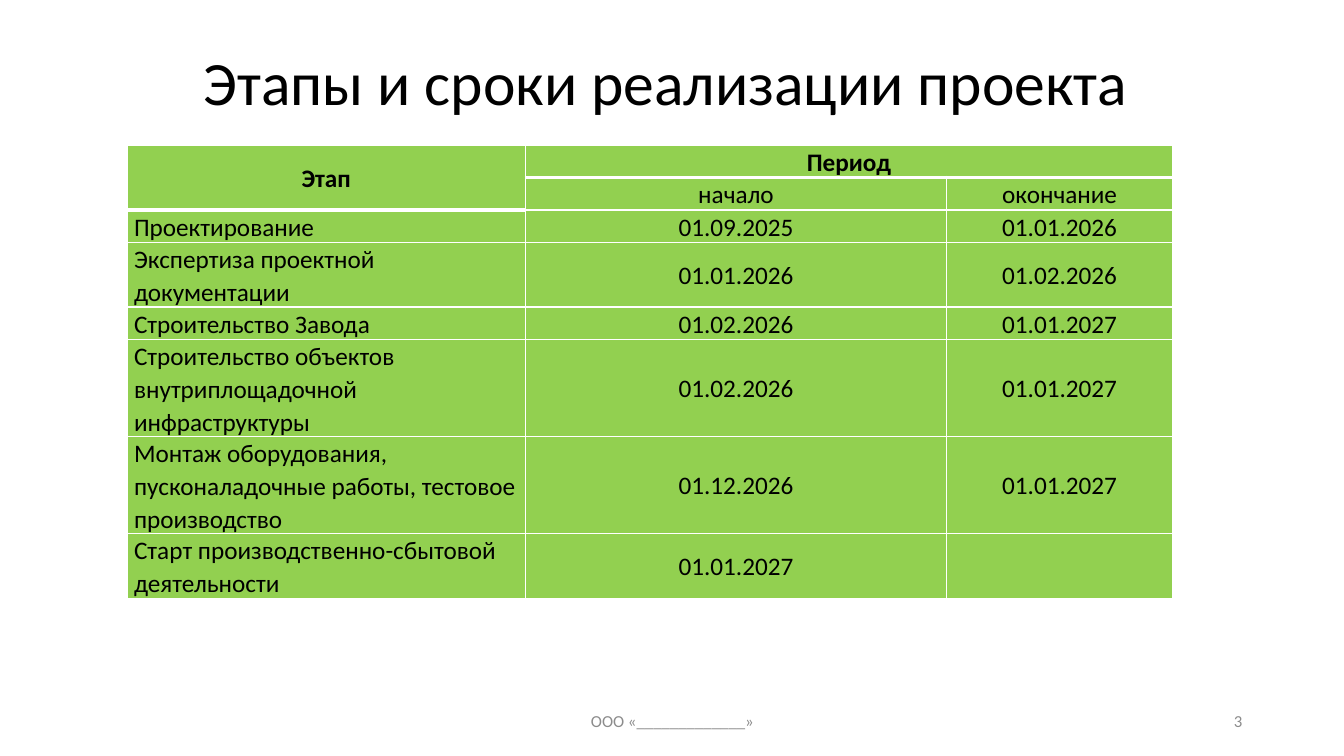
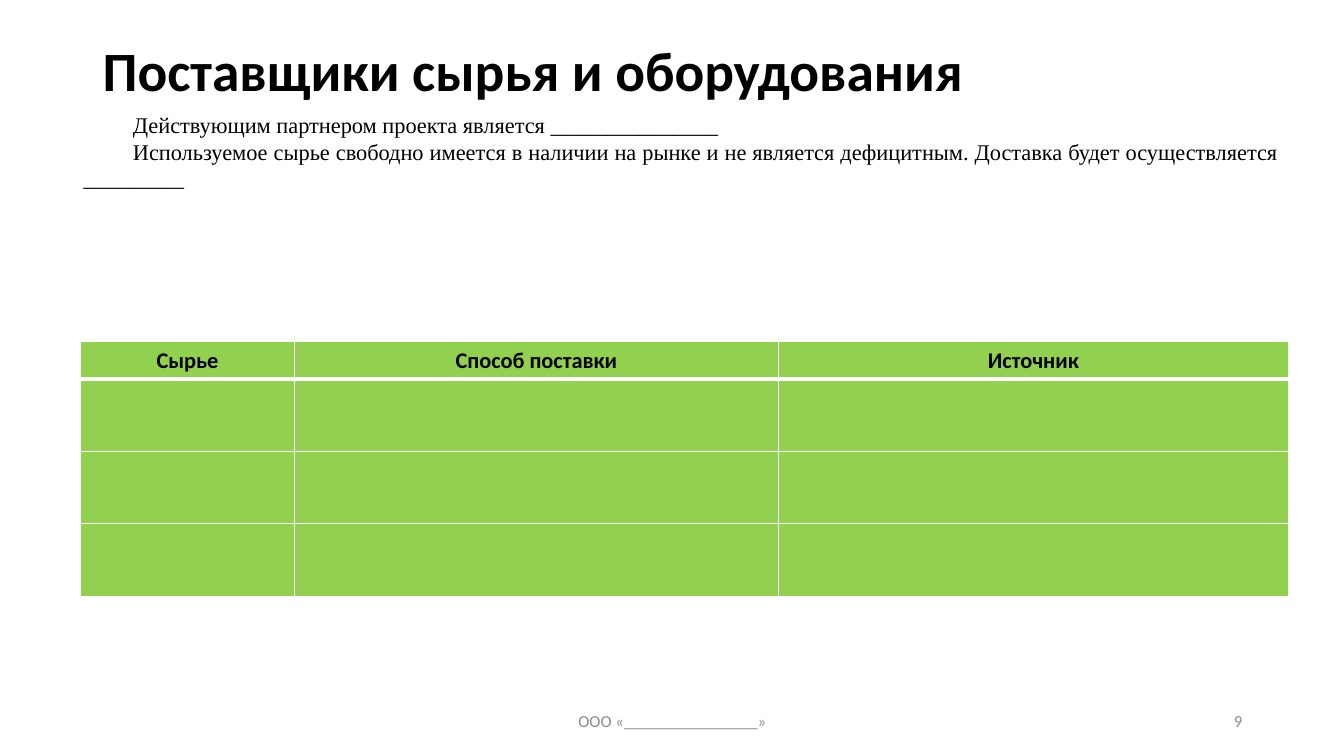
import dataclasses

import lxml.etree
import pptx
import pptx.dml.color
import pptx.enum.text
import pptx.oxml.ns
import pptx.util

EMU_PER_PX = 9144
ALIGN = pptx.enum.text.PP_ALIGN
MIDDLE = pptx.enum.text.MSO_ANCHOR.MIDDLE


@dataclasses.dataclass(frozen=True)
class Theme:
    text: str = "000000"
    muted: str = "8C8C8C"
    cell: str = "92D050"
    border: str = "FFFFFF"
    heading_font: str = "Calibri"
    body_font: str = "Times New Roman"
    title_size: float = 44
    small_title_size: float = 39.6
    schedule_size: float = 18
    body_size: float = 16
    footer_size: float = 12
    thin: float = 1
    thick: float = 3


THEME = Theme()

STAGES = [
    ["Этап", "Период", ""],
    ["", "начало", "окончание"],
    ["Проектирование", "01.09.2025", "01.01.2026"],
    ["Экспертиза проектной документации", "01.01.2026", "01.02.2026"],
    ["Строительство Завода", "01.02.2026", "01.01.2027"],
    ["Строительство объектов внутриплощадочной инфраструктуры", "01.02.2026", "01.01.2027"],
    ["Монтаж оборудования, пусконаладочные работы, тестовое производство", "01.12.2026", "01.01.2027"],
    ["Старт производственно-сбытовой деятельности", "01.01.2027", ""],
]
STAGE_LINES = [1, 1, 1, 2, 1, 3, 3, 2]
STAGE_LINE_HEIGHT = 32

SUPPLIES = [["Сырье", "Способ поставки", "Источник"]] + [[""] * 3] * 3

PARTNER_TEXT = [
    "Действующим партнером проекта является _______________",
    "Используемое сырье свободно имеется в наличии на рынке и не является "
    "дефицитным. Доставка будет осуществляется _________",
]


def px(value):
    return pptx.util.Emu(value * EMU_PER_PX)


def rgb(value):
    return pptx.dml.color.RGBColor.from_string(value)


def format_paragraph(paragraph, size, color=THEME.text, font=THEME.heading_font,
                     bold=False, align=ALIGN.LEFT, spacing=None, indent=0):
    paragraph.alignment = align
    if spacing:
        paragraph.line_spacing = spacing
    if indent:
        properties = paragraph._p.get_or_add_pPr()
        properties.set("marL", "0")
        properties.set("indent", str(px(indent)))
    for run in paragraph.runs:
        run.font.name = font
        run.font.size = pptx.util.Pt(size)
        run.font.bold = bold
        run.font.color.rgb = rgb(color)


def add_text(slide, box, text, size, anchor=MIDDLE, **style):
    shape = slide.shapes.add_textbox(*map(px, box))
    text_frame = shape.text_frame
    text_frame.word_wrap = True
    text_frame.vertical_anchor = anchor
    text_frame.text = text
    for paragraph in text_frame.paragraphs:
        format_paragraph(paragraph, size, **style)


def add_title(slide, text, height, size, **style):
    add_text(slide, (92, 40, 1150, height), text, size, spacing=0.9, **style)


def add_footer(slide, company, number):
    style = {"size": THEME.footer_size, "color": THEME.muted}
    add_text(slide, (442, 695, 450, 40), company, align=ALIGN.CENTER, **style)
    add_text(slide, (942, 695, 300, 40), number, align=ALIGN.RIGHT, **style)


def set_borders(cell, top, bottom):
    properties = cell._tc.get_or_add_tcPr()
    widths = {"lnL": THEME.thin, "lnR": THEME.thin, "lnT": top, "lnB": bottom}
    for position, (side, width) in enumerate(widths.items()):
        line = lxml.etree.Element(pptx.oxml.ns.qn(f"a:{side}"), w=str(pptx.util.Pt(width)))
        fill = lxml.etree.SubElement(line, pptx.oxml.ns.qn("a:solidFill"))
        lxml.etree.SubElement(fill, pptx.oxml.ns.qn("a:srgbClr"), val=THEME.border)
        properties.insert(position, line)


def add_table(slide, left, top, widths, heights, rows, size, headers,
              left_column=False, margins=None, anchor=None, spacing=None):
    frame = slide.shapes.add_table(len(rows), len(widths), px(left), px(top),
                                   px(sum(widths)), px(sum(heights)))
    table = frame.table
    table.first_row = False
    table.horz_banding = False
    for column, width in zip(table.columns, widths):
        column.width = px(width)
    for row, height in zip(table.rows, heights):
        row.height = px(height)
    for row_index, row in enumerate(rows):
        for column_index, text in enumerate(row):
            cell = table.cell(row_index, column_index)
            is_header = (row_index, column_index) in headers
            below_header = (row_index - 1, column_index) in headers
            cell.fill.solid()
            cell.fill.fore_color.rgb = rgb(THEME.cell)
            set_borders(cell, THEME.thick if below_header else THEME.thin,
                        THEME.thick if is_header else THEME.thin)
            if margins:
                cell.margin_left = cell.margin_right = px(margins[0])
                cell.margin_top = cell.margin_bottom = px(margins[1])
            if anchor:
                cell.vertical_anchor = anchor
            if text:
                cell.text_frame.text = text
                is_label = left_column and column_index == 0 and not is_header
                format_paragraph(cell.text_frame.paragraphs[0], size, bold=is_header,
                                 align=ALIGN.LEFT if is_label else ALIGN.CENTER,
                                 spacing=spacing)
    return table


def build_schedule(slide):
    add_title(slide, "Этапы и сроки реализации проекта", 89, THEME.title_size, indent=100)
    table = add_table(slide, 126, 144, [395, 418, 224],
                      [lines * STAGE_LINE_HEIGHT for lines in STAGE_LINES],
                      STAGES, THEME.schedule_size,
                      headers={(0, 0), (1, 0), (0, 1), (0, 2)}, left_column=True,
                      margins=(7, 0), anchor=MIDDLE, spacing=1.07)
    table.cell(0, 0).merge(table.cell(1, 0))
    table.cell(0, 1).merge(table.cell(0, 2))
    add_footer(slide, "ООО «_____________»", "3")


def build_suppliers(slide):
    add_title(slide, "Поставщики сырья и оборудования", 66, THEME.small_title_size, bold=True)
    add_footer(slide, "ООО «________________»", "9")
    add_text(slide, (73, 105, 1205, 91), "\n".join(PARTNER_TEXT), THEME.body_size,
             anchor=pptx.enum.text.MSO_ANCHOR.TOP, font=THEME.body_font,
             align=ALIGN.JUSTIFY, indent=49)
    add_table(slide, 80, 339, [212, 480, 506], [36, 72, 72, 72], SUPPLIES,
              THEME.body_size, headers={(0, 0), (0, 1), (0, 2)})


def main():
    presentation = pptx.Presentation()
    presentation.slide_width = px(1333)
    presentation.slide_height = px(750)
    blank = presentation.slide_layouts[6]
    for build in (build_schedule, build_suppliers):
        build(presentation.slides.add_slide(blank))
    presentation.save("out.pptx")


if __name__ == "__main__":
    main()
